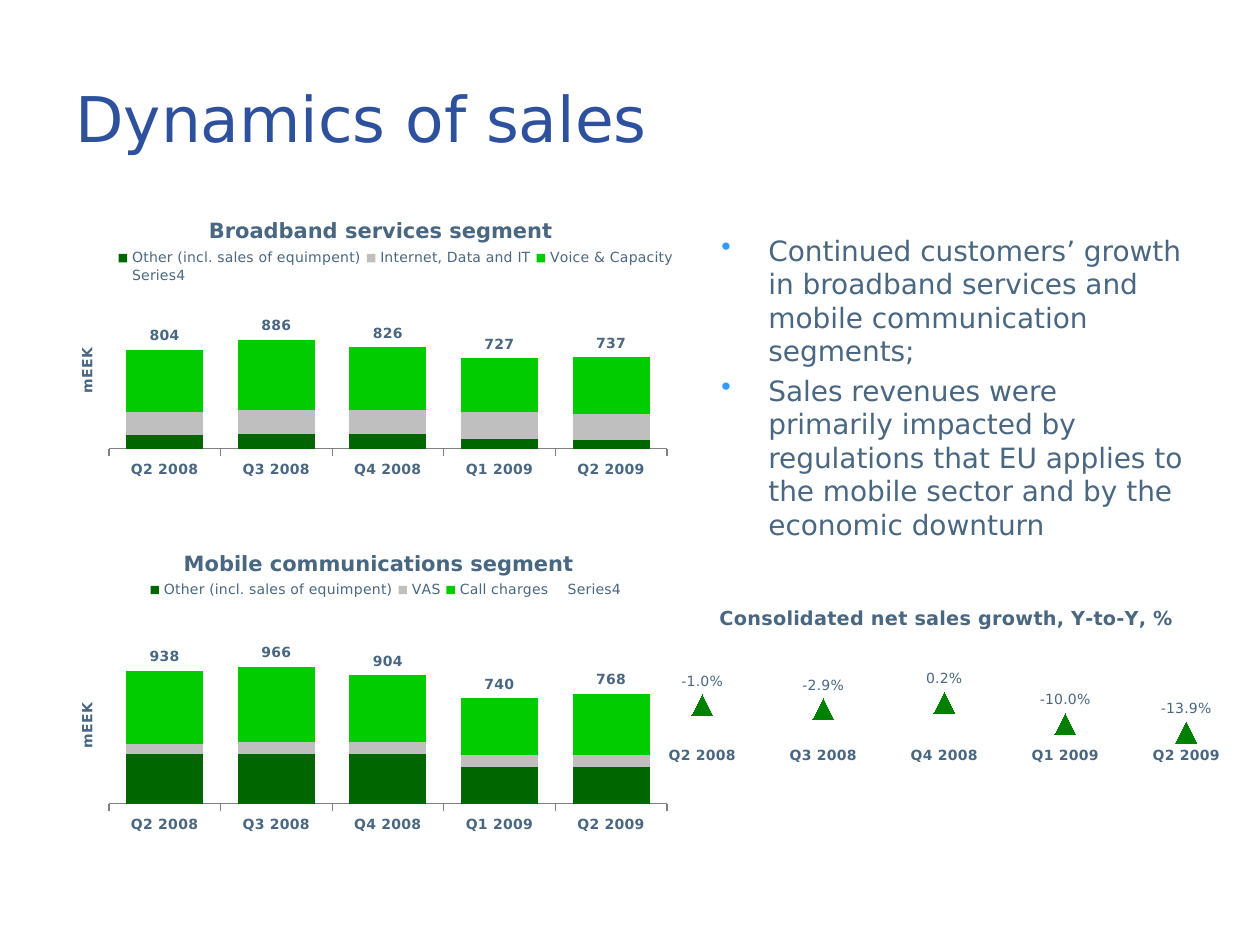
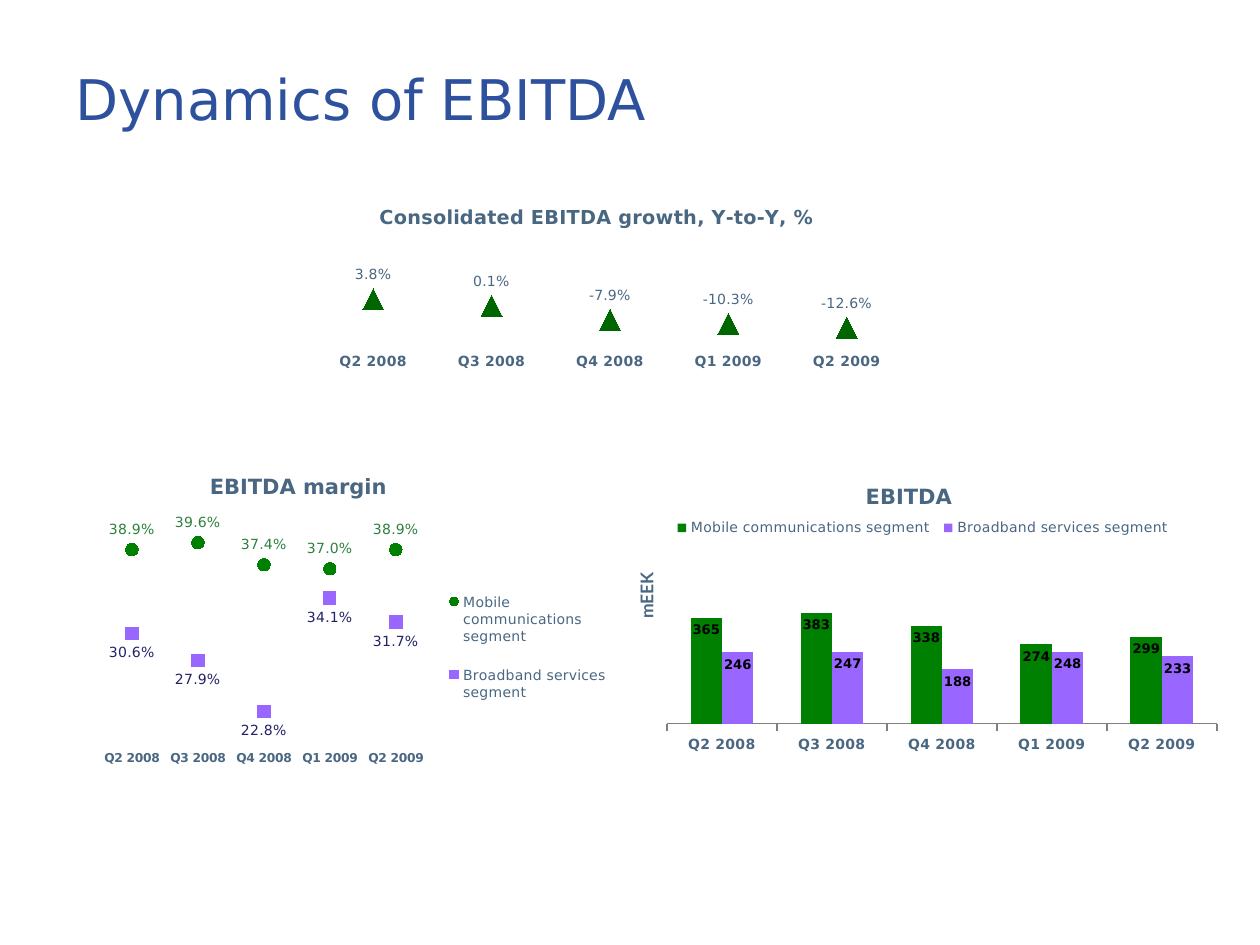
from dataclasses import dataclass
from typing import NamedTuple, Optional

from lxml import etree
from pptx import Presentation
from pptx.chart.data import CategoryChartData
from pptx.dml.color import RGBColor
from pptx.enum import chart as kinds, text
from pptx.oxml.ns import qn
from pptx import util as u

EMU_PER_PX = 914400 / 126
QUARTERS = ["Q2 2008", "Q3 2008", "Q4 2008", "Q1 2009", "Q2 2009"]
MOBILE = "Mobile communications segment"
BROADBAND = "Broadband services segment"
Kind = kinds.XL_CHART_TYPE
Spot = kinds.XL_LABEL_POSITION
Mark = kinds.XL_MARKER_STYLE


@dataclass(frozen=True)
class Theme:
    face: str = "DejaVu Sans"
    chart_face: str = "Lato"
    title: str = "2E519E"
    body: str = "4A6782"
    bullet: str = "3399FF"
    dark_green: str = "006600"
    green: str = "008000"
    bright_green: str = "00CC00"
    grey: str = "BFBFBF"
    purple: str = "9966FF"
    axis: str = "808080"
    black: str = "000000"
    mobile_label: str = "2F813F"
    broadband_label: str = "222267"
    body_size: float = 16
    chart_size: float = 10
    heading_size: float = 12
    growth_size: float = 11
    small_size: float = 8
    tiny_size: float = 7
    bar_label_size: float = 7.5


THEME = Theme()


class Box(NamedTuple):
    left: int
    top: int
    width: int
    height: int

    def emu(self) -> list[u.Emu]:
        return [px(length) for length in self]


class Point(NamedTuple):
    left: int
    top: int


class Labels(NamedTuple):
    spot: Spot
    color: str = THEME.body
    size: float = THEME.small_size
    bold: bool = False


class Series(NamedTuple):
    name: str
    values: list[float]
    color: Optional[str]
    labels: Optional[Labels] = None
    marker: Optional[Mark] = None
    marker_size: int = 7


class Scale(NamedTuple):
    low: float
    high: float
    step: float


@dataclass(frozen=True)
class Graph:
    """A chart; its inner places are page positions in px."""
    kind: Kind
    frame: Box
    title: str
    title_at: Point
    plot: Box
    scale: Scale
    series: list[Series]
    number_format: str
    title_size: float = THEME.heading_size
    category_size: float = THEME.small_size
    legend: Optional[Box] = None
    legend_side: kinds.XL_LEGEND_POSITION = kinds.XL_LEGEND_POSITION.TOP
    unit_at: Optional[Point] = None
    unit_face: str = THEME.face
    unit_size: float = THEME.small_size
    gap: int = 150
    overlap: int = 0


def px(length: int) -> u.Emu:
    return u.Emu(round(length * EMU_PER_PX))


def style_font(font, size: float, color: str = THEME.body, bold: bool = False,
               face: str = THEME.face) -> None:
    font.name, font.size, font.bold = face, u.Pt(size), bold
    font.color.rgb = RGBColor.from_string(color)


def paint(fill, color: Optional[str]) -> None:
    if color is None:
        fill.background()
    else:
        fill.solid()
        fill.fore_color.rgb = RGBColor.from_string(color)


def set_layout(parent, place: Point | Box, frame: Box, after: Optional[str] = None,
               inner: bool = False) -> None:
    """Fix a chart part at a page position, as fractions of the chart frame."""
    for former in parent.findall(qn("c:layout")):
        parent.remove(former)
    layout = etree.Element(qn("c:layout"))
    manual = etree.SubElement(layout, qn("c:manualLayout"))
    settings = {"layoutTarget": "inner"} if inner else {}
    settings |= {"xMode": "edge", "yMode": "edge",
                 "x": (place.left - frame.left) / frame.width,
                 "y": (place.top - frame.top) / frame.height}
    if isinstance(place, Box):
        settings |= {"w": place.width / frame.width, "h": place.height / frame.height}
    for tag, value in settings.items():
        shown = value if isinstance(value, str) else f"{value:.4f}"
        etree.SubElement(manual, qn(f"c:{tag}")).set("val", shown)
    if after:
        parent.find(qn(after)).addnext(layout)
    else:
        parent.insert(0, layout)


def style_series(drawn, series: Series, number_format: str) -> None:
    if series.marker is None:
        paint(drawn.format.fill, series.color)
        drawn.format.line.fill.background()
        drawn.invert_if_negative = False
    else:
        drawn.smooth = False
        drawn.format.line.fill.background()
        drawn.marker.style = series.marker
        drawn.marker.size = series.marker_size
        paint(drawn.marker.format.fill, series.color)
        drawn.marker.format.line.fill.background()
    if series.labels:
        labels = drawn.data_labels
        labels.show_value = True
        labels.number_format = number_format
        labels.number_format_is_linked = False
        style_font(labels.font, series.labels.size, series.labels.color, series.labels.bold)
        labels.position = series.labels.spot


def style_axes(chart, graph: Graph, has_bars: bool) -> None:
    categories, values = chart.category_axis, chart.value_axis
    style_font(categories.tick_labels.font, graph.category_size, bold=True)
    categories.has_major_gridlines = False
    categories.tick_label_position = kinds.XL_TICK_LABEL_POSITION.LOW
    if has_bars:
        categories.format.line.color.rgb = RGBColor.from_string(THEME.axis)
    else:
        categories.format.line.fill.background()
        categories.major_tick_mark = kinds.XL_TICK_MARK.NONE
    values.visible = False
    values.has_major_gridlines = False
    values.minimum_scale, values.maximum_scale, values.major_unit = graph.scale
    if graph.unit_at:
        frame = values.axis_title.text_frame
        frame.text = "mEEK"
        style_font(frame.paragraphs[0].runs[0].font, graph.unit_size, bold=True,
                   face=graph.unit_face)
        title = values.axis_title._element
        turned = title.find(".//" + qn("a:bodyPr"))
        turned.set("rot", "-5400000")
        turned.set("vert", "horz")
        set_layout(title, graph.unit_at, graph.frame, "c:tx")


def add_graph(page, graph: Graph) -> None:
    data = CategoryChartData(number_format=graph.number_format)
    data.categories = QUARTERS
    for series in graph.series:
        data.add_series(series.name, series.values)
    chart = page.shapes.add_chart(graph.kind, *graph.frame.emu(), data).chart
    style_font(chart.font, THEME.chart_size, THEME.black, face=THEME.chart_face)

    heading = chart.chart_title
    heading.text_frame.text = graph.title
    style_font(heading.text_frame.paragraphs[0].runs[0].font, graph.title_size, bold=True)
    set_layout(heading._element, graph.title_at, graph.frame, "c:tx")

    chart.has_legend = graph.legend is not None
    if graph.legend:
        chart.legend.position = graph.legend_side
        chart.legend.include_in_layout = False
        style_font(chart.legend.font, THEME.small_size)
        set_layout(chart.legend._element, graph.legend, graph.frame, "c:legendPos")

    plot = chart.plots[0]
    plot.vary_by_categories = False
    has_bars = graph.series[0].marker is None
    if has_bars:
        plot.gap_width, plot.overlap = graph.gap, graph.overlap
    for drawn, series in zip(plot.series, graph.series):
        style_series(drawn, series, graph.number_format)
    style_axes(chart, graph, has_bars)
    set_layout(chart._chartSpace.find(".//" + qn("c:plotArea")), graph.plot,
               graph.frame, inner=True)


def segment_graph(frame: Box, title: str, title_at: Point, legend: Box, plot: Box,
                  unit_at: Point, parts: dict[str, list[int]], totals: list[int]) -> Graph:
    """Stacked sales whose totals stand on an unfilled top series."""
    colors = (THEME.dark_green, THEME.grey, THEME.bright_green)
    series = [Series(name, values, color)
              for (name, values), color in zip(parts.items(), colors)]
    series.append(Series("Series4", totals, None, Labels(Spot.INSIDE_BASE, bold=True)))
    return Graph(Kind.COLUMN_STACKED, frame, title, title_at, plot, Scale(0, 2000, 200),
                 series, "#,##0", legend=legend, unit_at=unit_at, gap=45, overlap=100)


def growth_graph(frame: Box, title: str, title_at: Point, plot: Box, lowest: float,
                 color: str, values: list[float]) -> Graph:
    series = Series("Series 1", values, color, Labels(Spot.ABOVE), Mark.TRIANGLE, 12)
    return Graph(Kind.LINE_MARKERS_STACKED, frame, title, title_at, plot,
                 Scale(lowest, 1.2, 0.5), [series], "0.0%", title_size=THEME.growth_size)


def add_text(page, box: Box, lines: list[str], size: float, color: str,
             anchor: text.MSO_ANCHOR, bulleted: bool = False) -> None:
    frame = page.shapes.add_textbox(*box.emu()).text_frame
    frame.word_wrap = True
    frame.vertical_anchor = anchor
    frame.text = "\n".join(lines)
    for index, para in enumerate(frame.paragraphs):
        if bulleted:
            props = para._p.get_or_add_pPr()
            props.set("marL", str(px(47)))
            props.set("indent", str(-px(47)))
            tint = etree.SubElement(props, qn("a:buClr"))
            etree.SubElement(tint, qn("a:srgbClr")).set("val", THEME.bullet)
            etree.SubElement(props, qn("a:buChar")).set("char", "•")
        if index:
            para.space_before = u.Pt(size * 0.2)
        for span in para.runs:
            style_font(span.font, size, color)


def add_page(deck, title: str, height: int, size: float, graphs: list[Graph]):
    page = deck.slides.add_slide(deck.slide_layouts[6])
    add_text(page, Box(63, 38, 854, height), [title], size, THEME.title,
             text.MSO_ANCHOR.MIDDLE)
    for graph in graphs:
        add_graph(page, graph)
    return page


SALES = [
    segment_graph(Box(49, 108, 630, 378), BROADBAND, Point(205, 212), Box(113, 249, 566, 36),
                  Box(109, 201, 558, 248), Point(75, 345),
                  {"Other (incl. sales of equimpent)": [110, 120, 120, 80, 70],
                   "Internet, Data and IT": [190, 190, 190, 220, 210],
                   "Voice & Capacity": [500, 570, 510, 430, 460]},
                  [804, 886, 826, 727, 737]),
    segment_graph(Box(49, 462, 630, 378), MOBILE, Point(180, 545), Box(145, 580, 482, 20),
                  Box(109, 518, 558, 286), Point(75, 700),
                  {"Other (incl. sales of equimpent)": [350, 350, 350, 260, 260],
                   "VAS": [70, 80, 80, 80, 80],
                   "Call charges": [510, 530, 470, 400, 430]},
                  [938, 966, 904, 740, 768]),
    growth_graph(Box(630, 393, 630, 378), "Consolidated net sales growth, Y-to-Y, %",
                 Point(716, 601), Box(642, 452, 605, 283), -0.15, THEME.green,
                 [-0.01, -0.029, 0.002, -0.1, -0.139]),
]

MARGIN_LABELS = (Labels(Spot.ABOVE, THEME.mobile_label),
                 Labels(Spot.BELOW, THEME.broadband_label))
BAR_LABELS = Labels(Spot.INSIDE_END, THEME.black, THEME.bar_label_size, True)
EBITDA = [
    growth_graph(Box(295, 78, 630, 378), "Consolidated EBITDA growth, Y-to-Y, %",
                 Point(376, 200), Box(314, 97, 592, 244), -0.2, THEME.dark_green,
                 [0.038, 0.001, -0.079, -0.103, -0.126]),
    Graph(Kind.LINE_MARKERS, Box(20, 413, 630, 378), "EBITDA margin", Point(206, 468),
          Box(99, 438, 330, 302), Scale(0.2, 0.5, 0.01),
          [Series(MOBILE, [0.389, 0.396, 0.374, 0.37, 0.389], THEME.green,
                  MARGIN_LABELS[0], Mark.CIRCLE),
           Series(BROADBAND, [0.306, 0.279, 0.228, 0.341, 0.317], THEME.purple,
                  MARGIN_LABELS[1], Mark.SQUARE)],
          "0.0%", category_size=THEME.tiny_size, legend=Box(446, 573, 164, 150),
          legend_side=kinds.XL_LEGEND_POSITION.RIGHT),
    Graph(Kind.COLUMN_CLUSTERED, Box(601, 374, 630, 387), "EBITDA", Point(862, 478),
          Box(667, 434, 550, 290), Scale(0, 1000, 200),
          [Series(MOBILE, [365, 383, 338, 274, 299], THEME.green, BAR_LABELS),
           Series(BROADBAND, [246, 247, 188, 248, 233], THEME.purple, BAR_LABELS)],
          "0", legend=Box(668, 517, 510, 22),
          legend_side=kinds.XL_LEGEND_POSITION.CORNER, unit_at=Point(631, 570),
          unit_face=THEME.chart_face, unit_size=THEME.chart_size),
]

REMARKS = [
    "Continued customers’ growth in broadband services and mobile communication segments;",
    "Sales revenues were primarily impacted by regulations that EU applies to the mobile "
    "sector and by the economic downturn",
]


def main() -> None:
    deck = Presentation()
    deck.slide_width, deck.slide_height = px(1260), px(945)
    page = add_page(deck, "Dynamics of sales", 158, 36, SALES)
    add_text(page, Box(709, 227, 494, 335), REMARKS, THEME.body_size, THEME.body,
             text.MSO_ANCHOR.TOP, bulleted=True)
    add_page(deck, "Dynamics of EBITDA", 120, 32, EBITDA)
    deck.save("out.pptx")


if __name__ == "__main__":
    main()
